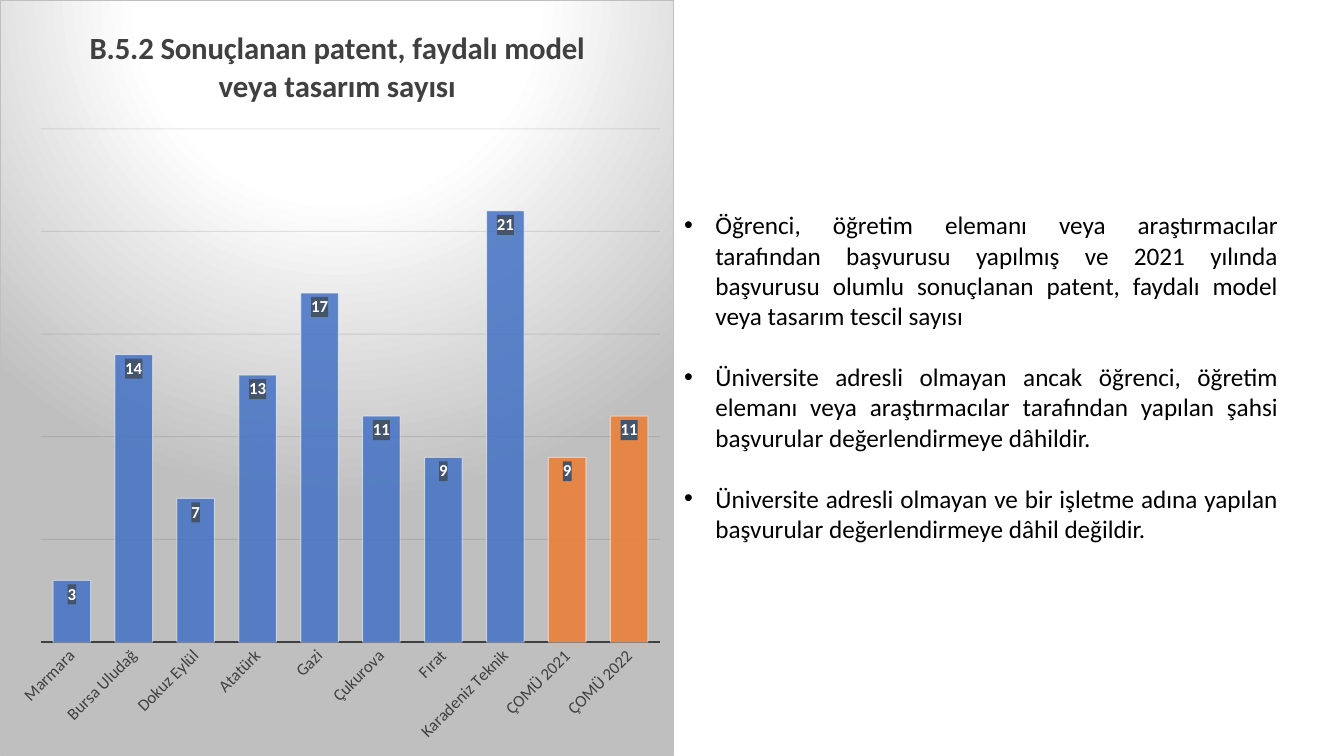
from pptx import Presentation
from pptx.chart.data import CategoryChartData
from pptx.dml.color import RGBColor
from pptx.enum.chart import XL_CHART_TYPE, XL_LABEL_POSITION, XL_TICK_MARK
from pptx.enum.text import MSO_AUTO_SIZE, PP_ALIGN
from pptx.oxml import parse_xml
from pptx.oxml.ns import nsdecls, qn
from pptx.util import Cm, Pt

FONT = "Calibri"
TITLE = "B.5.2 Sonuçlanan patent, faydalı model veya tasarım sayısı"
COUNTS = {
    "Marmara": 3, "Bursa Uludağ": 14, "Dokuz Eylül": 7, "Atatürk": 13,
    "Gazi": 17, "Çukurova": 11, "Fırat": 9, "Karadeniz Teknik": 21,
    "ÇOMÜ 2021": 9, "ÇOMÜ 2022": 11,
}
NOTES = [
    "Öğrenci, öğretim elemanı veya araştırmacılar tarafından başvurusu yapılmış "
    "ve 2021 yılında başvurusu olumlu sonuçlanan patent, faydalı model veya "
    "tasarım tescil sayısı",
    "Üniversite adresli olmayan ancak öğrenci, öğretim elemanı veya "
    "araştırmacılar tarafından yapılan şahsi başvurular değerlendirmeye dâhildir.",
    "Üniversite adresli olmayan ve bir işletme adına yapılan başvurular "
    "değerlendirmeye dâhil değildir.",
]
PANEL = f"""<c:spPr {nsdecls("c", "a")}>
<a:gradFill><a:gsLst>
<a:gs pos="0"><a:srgbClr val="FFFFFF"/></a:gs>
<a:gs pos="39000"><a:srgbClr val="FFFFFF"/></a:gs>
<a:gs pos="100000"><a:srgbClr val="BFBFBF"/></a:gs>
</a:gsLst><a:path path="circle">
<a:fillToRect l="50000" t="-80000" r="50000" b="180000"/></a:path></a:gradFill>
<a:ln w="9525"><a:solidFill><a:srgbClr val="BFBFBF"/></a:solidFill></a:ln>
</c:spPr>"""
BADGE = f"""<c:spPr {nsdecls("c", "a")}>
<a:solidFill><a:srgbClr val="44546A"/></a:solidFill></c:spPr>"""
LAYOUT = f"""<c:layout {nsdecls("c")}><c:manualLayout>
<c:layoutTarget val="inner"/><c:xMode val="edge"/><c:yMode val="edge"/>
<c:x val="0.06"/><c:y val="0.17"/><c:w val="0.92"/><c:h val="0.68"/>
</c:manualLayout></c:layout>"""


def color(code):
    """Turn a hex string into a colour."""
    return RGBColor.from_string(code)


def style(font, size, code, bold=False):
    """Set the face, size, colour and weight of a font."""
    font.name, font.size, font.bold = FONT, Pt(size), bold
    font.color.rgb = color(code)


def paint(fill, code, alpha=100):
    """Fill with a solid colour at a given opacity in percent."""
    fill.solid()
    fill.fore_color.rgb = color(code)
    tint = fill._xPr.find(qn("a:solidFill"))[0]
    tint.append(parse_xml(f'<a:alpha {nsdecls("a")} val="{alpha * 1000}"/>'))


def stroke(line, code, width, alpha=100):
    """Give a line its colour, width and opacity."""
    line.width = Pt(width)
    paint(line.fill, code, alpha)


def set_axes(chart):
    """Format both axes and the gridlines."""
    names, scale = chart.category_axis, chart.value_axis
    names.major_tick_mark = XL_TICK_MARK.NONE
    style(names.tick_labels.font, 12, "404040")
    stroke(names.format.line, "404040", 1.5)
    turn = names._element.find(qn("c:txPr")).find(qn("a:bodyPr"))
    turn.set("rot", "-2700000")
    turn.set("vert", "horz")
    scale.minimum_scale, scale.maximum_scale, scale.major_unit = 0, 25, 5
    scale.visible = False
    stroke(scale.major_gridlines.format.line, "0D0D0D", 0.75, 10)


def set_bars(plot):
    """Colour the bars and label them."""
    plot.gap_width = 65
    plot.vary_by_categories = False
    bars = plot.series[0]
    own = [bars.points[i] for i, name in enumerate(COUNTS) if name.startswith("ÇOMÜ")]
    for item, code in [(bars, "4472C4")] + [(point, "ED7D31") for point in own]:
        paint(item.format.fill, code, 85)
        stroke(item.format.line, "FFFFFF", 0.75, 50)
    labels = bars.data_labels
    labels.show_value = True
    labels.position = XL_LABEL_POSITION.INSIDE_END
    style(labels.font, 12, "FFFFFF", True)
    labels._element.find(qn("c:txPr")).addprevious(parse_xml(BADGE))


def add_bars(slide):
    """Add the column chart on its shaded panel."""
    data = CategoryChartData()
    data.categories = list(COUNTS)
    data.add_series(TITLE, list(COUNTS.values()))
    chart = slide.shapes.add_chart(
        XL_CHART_TYPE.COLUMN_CLUSTERED, 0, 0, Cm(16.99), Cm(19.05), data).chart
    chart.has_legend = False
    style(chart.font, 10, "000000")
    frame = chart.chart_title.text_frame
    frame.text = TITLE
    style(frame.paragraphs[0].font, 22, "404040", True)
    set_axes(chart)
    set_bars(chart.plots[0])
    chart._chartSpace.find(qn("c:txPr")).addprevious(parse_xml(PANEL))
    area = chart._chartSpace.chart.plotArea
    for old in area.findall(qn("c:layout")):
        area.remove(old)
    area.insert(0, parse_xml(LAYOUT))


def add_notes(slide):
    """Add the justified bullet list."""
    frame = slide.shapes.add_textbox(
        Cm(16.99), Cm(5.16), Cm(15.47), Cm(8.71)).text_frame
    frame.word_wrap = True
    frame.auto_size = MSO_AUTO_SIZE.SHAPE_TO_FIT_TEXT
    for i, note in enumerate(NOTES):
        para = frame.add_paragraph() if i else frame.paragraphs[0]
        para.text = note
        para.alignment = PP_ALIGN.JUSTIFY
        para.space_before = Pt(22 if i else 0)
        style(para.font, 18, "000000")
        props = para._p.get_or_add_pPr()
        props.set("marL", str(Cm(0.79)))
        props.set("indent", str(-Cm(0.79)))
        mark = parse_xml(f'<a:buChar {nsdecls("a")} char="•"/>')
        face = parse_xml(f'<a:buFont {nsdecls("a")} typeface="Arial"/>')
        props.find(qn("a:defRPr")).addprevious(face)
        face.addnext(mark)


def main():
    """Build the slide and save it."""
    deck = Presentation()
    deck.slide_width, deck.slide_height = Cm(33.87), Cm(19.05)
    slide = deck.slides.add_slide(deck.slide_layouts[6])
    add_bars(slide)
    add_notes(slide)
    deck.save("out.pptx")


if __name__ == "__main__":
    main()
